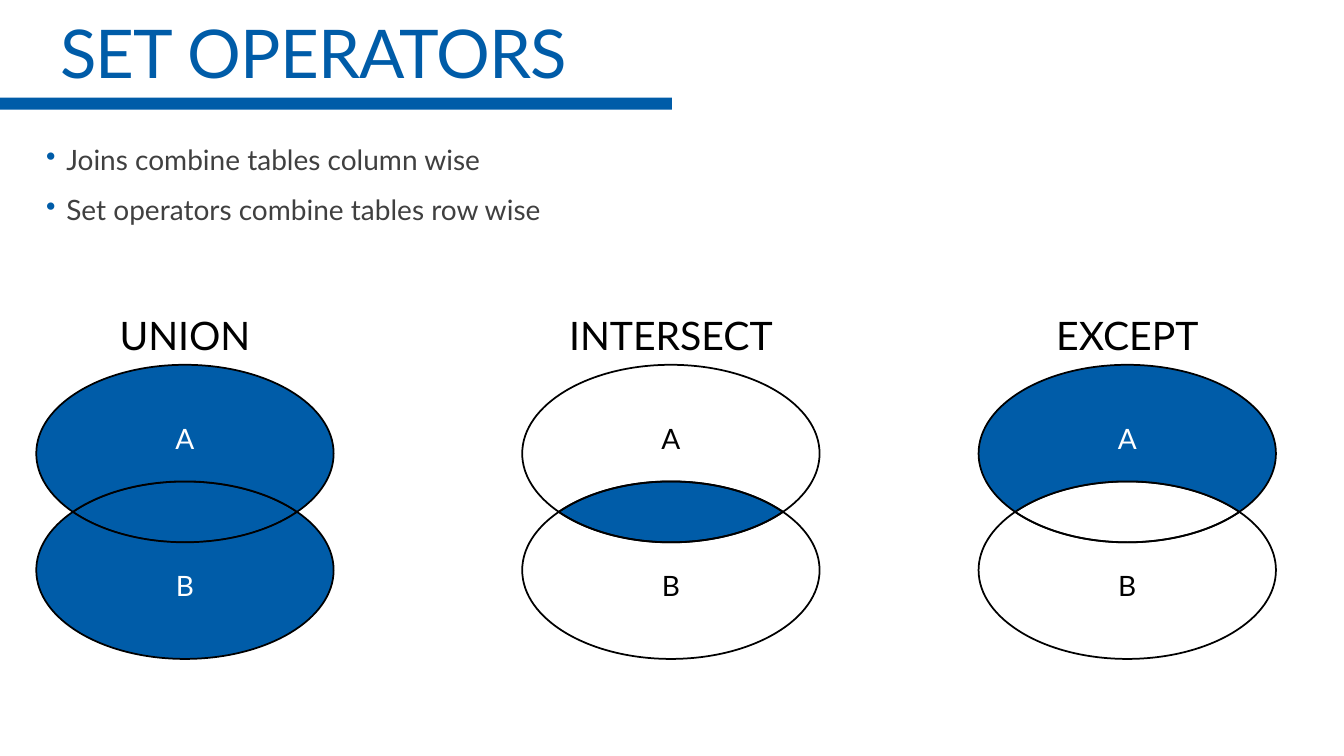
from math import asin, cos, degrees, radians, sin, tan

from lxml.etree import SubElement
from pptx import Presentation
from pptx.dml.color import RGBColor
from pptx.enum.shapes import MSO_SHAPE as Shape
from pptx.enum.text import MSO_ANCHOR as Anchor, MSO_AUTO_SIZE as Fit, PP_ALIGN as Align
from pptx.oxml.ns import qn
from pptx.util import Pt

BLUE, GREY, BLACK, WHITE = "005CA8", "404040", "000000", "FFFFFF"
RX, RY = 106.2, 63.4            # radii of every ellipse
TOP, LOW = 324, 407.3           # centre heights of A and B
CUT = degrees(asin((LOW - TOP) / 2 / RY))   # angle where A and B cross
# label, centre, then the fills of the overlap, A and B
VENNS = [
    ("UNION", 132.1, BLUE, BLUE, BLUE),
    ("INTERSECT", 479.2, BLUE, None, None),
    ("EXCEPT", 805.2, None, BLUE, None),
]


def tint(code):
    return RGBColor.from_string(code)


def paint(fill, code):
    if code:
        fill.solid()
        fill.fore_color.rgb = tint(code)
    else:
        fill.background()


def apply(item, form):
    for name, value in form.items():
        setattr(item, name, value)


def place(item, left, top, width, height):
    apply(item, {"left": Pt(left), "top": Pt(top),
                 "width": Pt(width), "height": Pt(height)})


def write(para, text, size, code, **form):
    """Fill a paragraph with one run and return the run."""
    apply(para, form)
    run = para.add_run()
    run.text = text
    apply(run.font, {"name": "Lato", "size": Pt(size), "bold": False})
    run.font.color.rgb = tint(code)
    return run


def add_bar(slide):
    bar = slide.shapes.add_shape(Shape.RECTANGLE, 0, Pt(69.8), Pt(480), Pt(8.6))
    bar.shadow.inherit = False
    paint(bar.fill, BLUE)
    bar.line.fill.background()


def add_title(slide, text):
    title = slide.shapes.title
    place(title, 25.9, 0, 785.5, 69.8)
    frame = title.text_frame
    apply(frame, {"vertical_anchor": Anchor.BOTTOM, "auto_size": Fit.NONE,
                  "margin_left": Pt(17)})
    run = write(frame.paragraphs[0], text, 48, BLUE,
                alignment=Align.LEFT, line_spacing=0.9)
    run.font._element.set("spc", "-50")


def add_box(slide, left, top, width, height):
    box = slide.shapes.add_textbox(Pt(left), Pt(top), Pt(width), Pt(height))
    box.text_frame.word_wrap = True
    return box.text_frame


def add_list(slide, lines):
    frame = add_box(slide, 25.9, 100.8, 907.2, 112.3)
    for i, text in enumerate(lines):
        para = frame.add_paragraph() if i else frame.paragraphs[0]
        props = para._p.get_or_add_pPr()
        apply(para, {"line_spacing": 0.9, "space_after": Pt(2),
                     "space_before": Pt(12 if i else 0)})
        props.set("marL", str(Pt(14.4)))
        props.set("indent", str(-Pt(14.4)))
        SubElement(SubElement(props, qn("a:buClr")), qn("a:srgbClr"), val=BLUE)
        SubElement(props, qn("a:buChar"), char="•")
        write(para, text, 20, GREY)


def arc(mid, high, *stops):
    """Start point, then three Bezier points for each step between the angles."""
    def spot(turn, pull=0):
        return (Pt(mid + RX * (cos(turn) - pull * sin(turn))),
                Pt(high + RY * (sin(turn) + pull * cos(turn))))

    turns = [radians(stop) for stop in stops]
    points = [spot(turns[0])]
    for a, b in zip(turns, turns[1:]):
        pull = 4 / 3 * tan((b - a) / 4)
        points += [spot(a, pull), spot(b, -pull), spot(b)]
    return points


def bend(part):
    """Turn each three line segments into one Bezier curve."""
    track = part._element.find(".//" + qn("a:path"))
    lines = track.findall(qn("a:lnTo"))
    for i in range(0, len(lines), 3):
        curve = SubElement(track, qn("a:cubicBezTo"))
        lines[i].addprevious(curve)
        for line in lines[i:i + 3]:
            curve.append(line[0])
            track.remove(line)


def add_part(slide, first, second, code, text=""):
    """Draw the area between two arcs."""
    pen = slide.shapes.build_freeform(*first[0], scale=1)
    pen.add_line_segments(first[1:] + second[1:], close=True)
    part = pen.convert_to_shape()
    bend(part)
    part.shadow.inherit = False
    paint(part.fill, code)
    paint(part.line.fill, BLACK)
    part.line.width = Pt(1.25)
    if text:
        part.text_frame.vertical_anchor = Anchor.MIDDLE
        write(part.text_frame.paragraphs[0], text, 20, WHITE if code else BLACK,
              alignment=Align.CENTER)


def add_venn(slide, label, mid, both, upper, lower):
    frame = add_box(slide, mid - 85, 218.9, 170, 41)
    write(frame.paragraphs[0], label, 28, BLACK, alignment=Align.CENTER)
    floor = arc(mid, TOP, CUT, 90, 180 - CUT)
    roof = arc(mid, LOW, 180 + CUT, 270, 360 - CUT)
    dome = arc(mid, TOP, 180 - CUT, 180, 270, 360, 360 + CUT)
    bowl = arc(mid, LOW, -CUT, 0, 90, 180, 180 + CUT)
    add_part(slide, floor, roof, both)
    add_part(slide, dome, roof[::-1], upper, "A")
    add_part(slide, bowl, floor[::-1], lower, "B")


def main():
    deck = Presentation()
    apply(deck, {"slide_width": Pt(960), "slide_height": Pt(540)})
    slide = deck.slides.add_slide(deck.slide_layouts[5])
    add_bar(slide)
    add_title(slide, "SET OPERATORS")
    add_list(slide, ["Joins combine tables column wise",
                     "Set operators combine tables row wise"])
    for venn in VENNS:
        add_venn(slide, *venn)
    deck.save("out.pptx")


if __name__ == "__main__":
    main()
